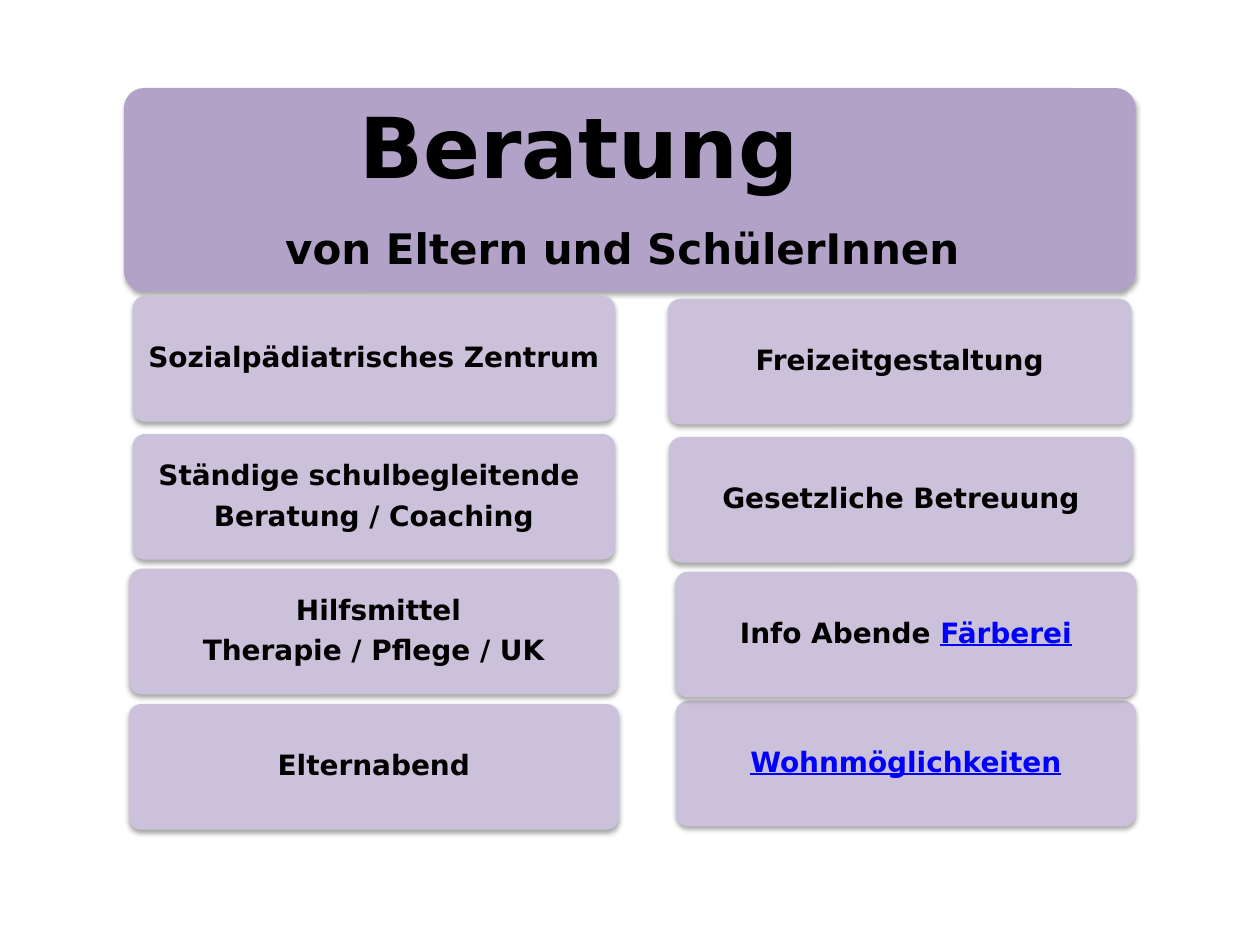
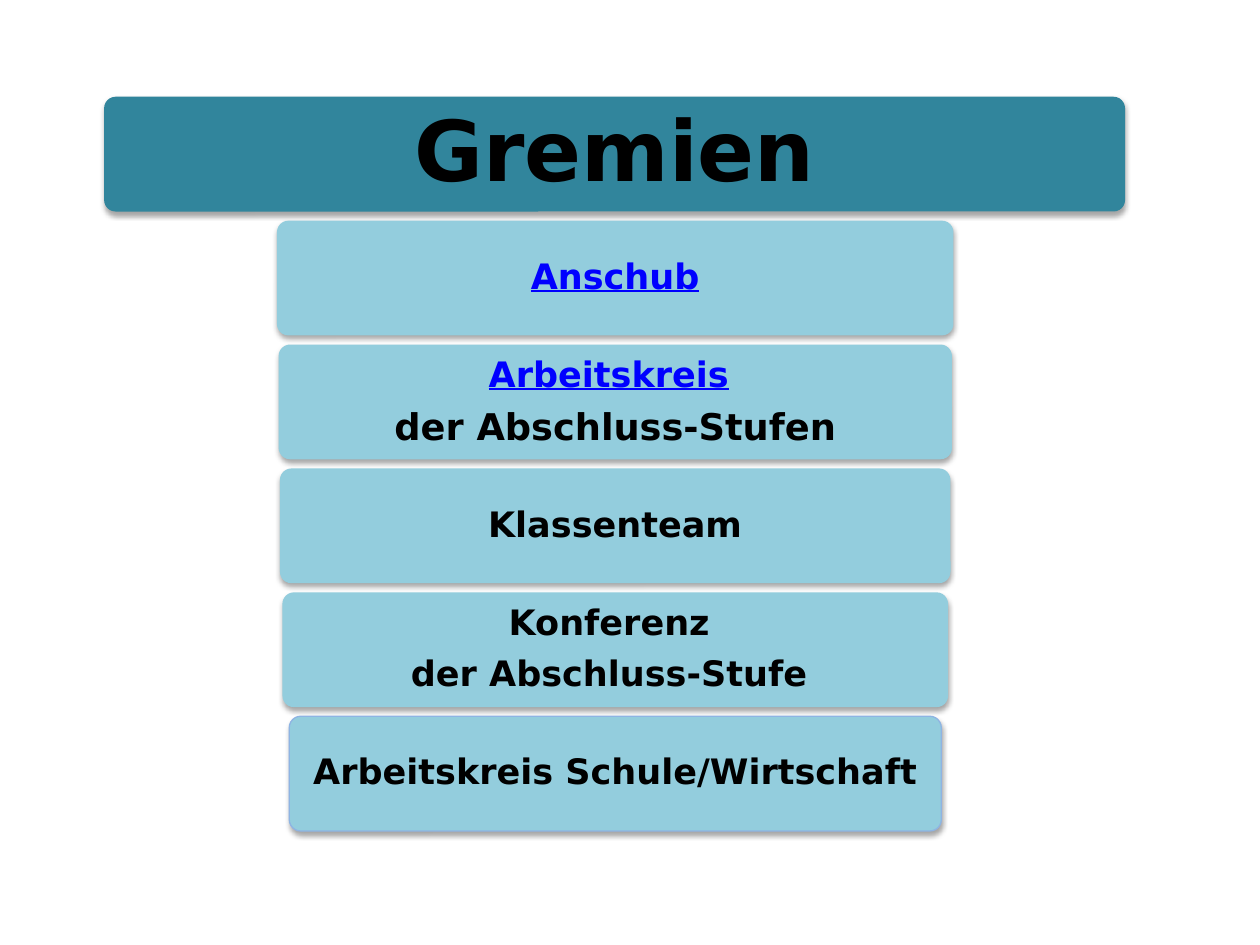
import pptx
import pptx.util
import pptx.dml.color
import pptx.enum.shapes
import pptx.enum.text
from lxml import etree

Pt = pptx.util.Pt
RGBColor = pptx.dml.color.RGBColor

FONT = "DejaVu Sans"
BLACK = RGBColor(0x00, 0x00, 0x00)
LINK_BLUE = RGBColor(0x00, 0x00, 0xFF)
PURPLE = RGBColor(0xB3, 0xA2, 0xC7)
LILAC = RGBColor(0xCC, 0xC1, 0xDA)
TEAL = RGBColor(0x31, 0x85, 0x9C)
AQUA = RGBColor(0x93, 0xCD, 0xDD)
EDGE_BLUE = RGBColor(0x8E, 0xB4, 0xE3)
LINKS = {"Färberei", "Wohnmöglichkeiten", "Anschub", "Arbeitskreis"}
A = "{http://schemas.openxmlformats.org/drawingml/2006/main}"


def add_shadow(sp):
    sp.shadow.inherit = False
    effects = sp._element.spPr.find(A + "effectLst")
    shadow = etree.SubElement(effects, A + "outerShdw", blurRad=str(Pt(3.1)),
                              dist=str(Pt(1.8)), dir="5400000", rotWithShape="0")
    color = etree.SubElement(shadow, A + "srgbClr", val="000000")
    etree.SubElement(color, A + "alpha", val="35000")


def add_box(s, left, top, width, height, fill, size, inset, paragraphs):
    sp = s.shapes.add_shape(pptx.enum.shapes.MSO_SHAPE.ROUNDED_RECTANGLE,
                            Pt(left), Pt(top), Pt(width), Pt(height))
    sp.adjustments[0] = 0.1
    sp.fill.solid()
    sp.fill.fore_color.rgb = fill
    sp.line.fill.background()
    add_shadow(sp)
    tf = sp.text_frame
    tf.word_wrap = True
    tf.vertical_anchor = pptx.enum.text.MSO_ANCHOR.MIDDLE
    tf.margin_left = tf.margin_right = tf.margin_top = tf.margin_bottom = Pt(inset)
    for i, texts in enumerate(paragraphs):
        p = tf.add_paragraph() if i else tf.paragraphs[0]
        p.alignment = pptx.enum.text.PP_ALIGN.CENTER
        p.line_spacing = 0.9
        p.space_after = Pt(round(size * 0.37, 1))
        for text in texts:
            r = p.add_run()
            r.text = text
            r.font.name = FONT
            r.font.size = Pt(size)
            r.font.bold = True
            r.font.color.rgb = LINK_BLUE if text in LINKS else BLACK
            if text in LINKS:
                r.font.underline = True
    return sp


prs = pptx.Presentation()
prs.slide_width = Pt(720)
prs.slide_height = Pt(540)
blank = prs.slide_layouts[6]

s = prs.slides.add_slide(blank)
sp = add_box(s, 70.8, 50.3, 578.2, 116.2, PURPLE, 48, 14.4,
             [["Beratung"], ["von Eltern und SchülerInnen "]])
tf = sp.text_frame
title_shift = 58
tf.margin_right = Pt(14.4 + title_shift)
p = tf.paragraphs[1]
p.runs[0].font.size = Pt(24)
pPr = p._p.get_or_add_pPr()
pPr.set("marL", str(Pt(title_shift)))
pPr.set("indent", "0")

services = [
    (75.8, 169.1, 275.7, [["Sozialpädiatrisches Zentrum"]]),
    (75.8, 248, 275.7, [["Ständige schulbegleitende "], ["Beratung / Coaching"]]),
    (73.9, 325, 279.3, [[" Hilfsmittel"], ["Therapie / Pflege / UK"]]),
    (73.6, 402.3, 280.1, [["Elternabend"]]),
    (381.6, 170.7, 265, [["Freizeitgestaltung"]]),
    (382.3, 249.7, 265, [["Gesetzliche Betreuung"]]),
    (386.2, 400.4, 263, [["Wohnmöglichkeiten"]]),
    (385.9, 326.7, 263.5, [["Info Abende ", "Färberei"]]),
]
for left, top, width, paragraphs in services:
    add_box(s, left, top, width, 71.8, LILAC, 16, 4.8, paragraphs)

s = prs.slides.add_slide(blank)
height, pitch, first_top, center = 65.6, 70.8, 55.3, 351.6
add_box(s, 59.5, first_top, 583.4, height, TEAL, 48, 14.4, [["Gremien"]])

committees = [
    (386.6, [["Anschub"]]),
    (384.8, [["Arbeitskreis", " "], ["der Abschluss-Stufen"]]),
    (383.2, [["Klassenteam"]]),
    (380.4, [["Konferenz "], ["der Abschluss-Stufe "]]),
    (372.6, [["Arbeitskreis Schule/Wirtschaft"]]),
]
boxes = []
for row, (width, paragraphs) in enumerate(committees, 1):
    sp = add_box(s, center - width / 2, first_top + row * pitch, width, height,
                 AQUA, 20, 6, paragraphs)
    boxes.append(sp)

first, second = boxes[1].text_frame.paragraphs
for r in (first.runs[1], second.runs[0]):
    r.font.size = Pt(21)
boxes[-1].line.color.rgb = EDGE_BLUE
boxes[-1].line.width = Pt(0.75)

prs.save("out.pptx")
